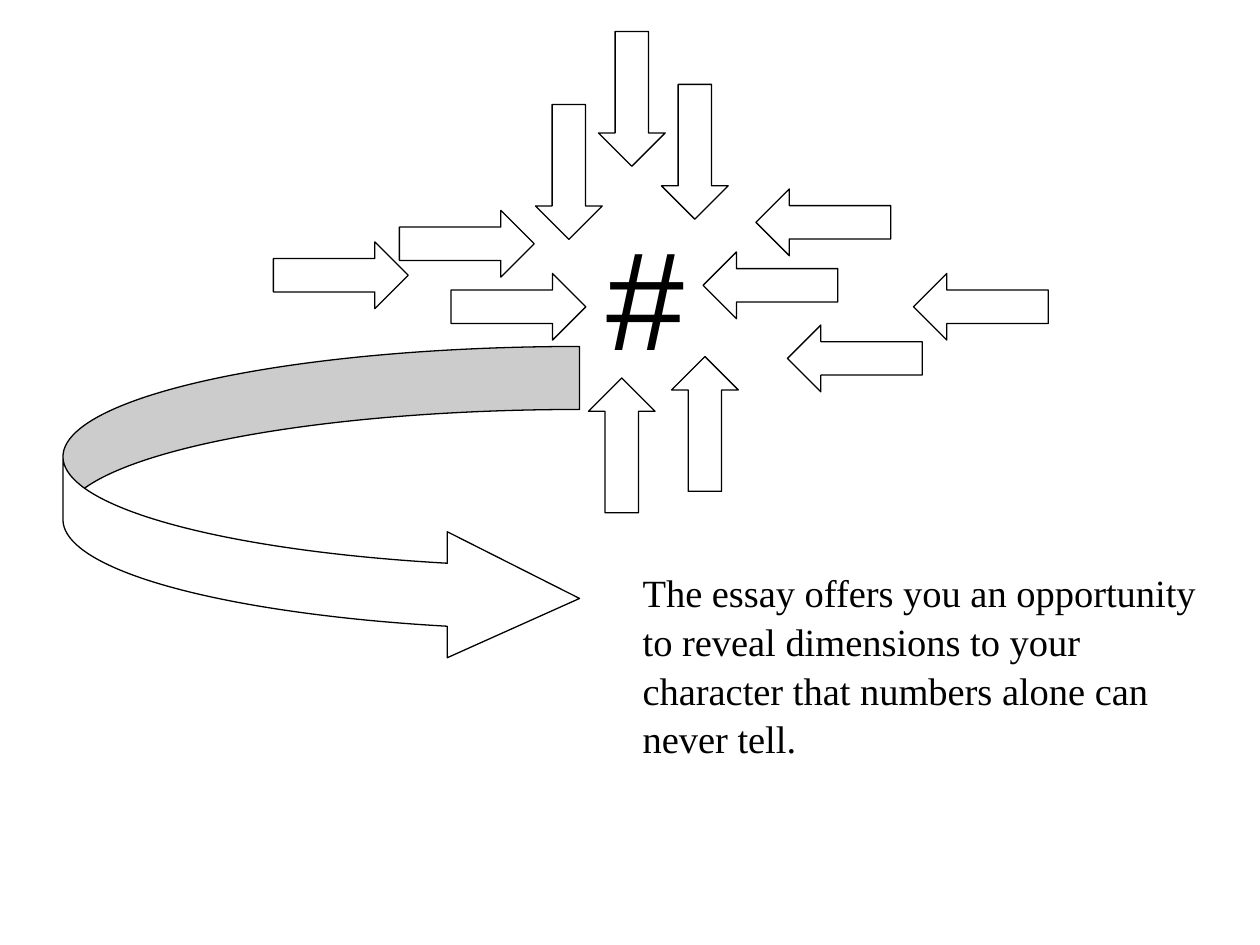
from dataclasses import dataclass

from lxml.etree import SubElement
from pptx import Presentation
from pptx.dml.color import RGBColor
from pptx.enum.shapes import MSO_SHAPE
from pptx.enum.text import MSO_ANCHOR, MSO_AUTO_SIZE, PP_ALIGN
from pptx.oxml.ns import qn
from pptx.util import Inches, Pt

BLACK = "000000"
WHITE = "FFFFFF"
ARROW_LENGTH = 1.07
ARROW_WIDTH = 0.53
ESSAY_TEXT = ("The essay offers you an opportunity to reveal dimensions to your "
              "character that numbers alone can never tell.")


@dataclass(frozen=True)
class Arrow:
    kind: MSO_SHAPE
    left: float
    top: float
    width: float
    height: float
    adjustments: tuple[float, ...] = (0.5, 0.5)


def horizontal(kind: MSO_SHAPE, left: float, top: float) -> Arrow:
    return Arrow(kind, left, top, ARROW_LENGTH, ARROW_WIDTH)


def vertical(kind: MSO_SHAPE, left: float, top: float) -> Arrow:
    return Arrow(kind, left, top, ARROW_WIDTH, ARROW_LENGTH)


ARROWS = [
    *(horizontal(MSO_SHAPE.RIGHT_ARROW, left, top)
      for left, top in [(3.58, 2.17), (3.17, 1.67)]),
    *(vertical(MSO_SHAPE.DOWN_ARROW, left, top)
      for left, top in [(4.25, 0.83), (4.75, 0.25), (5.25, 0.67)]),
    *(horizontal(MSO_SHAPE.LEFT_ARROW, left, top)
      for left, top in [(5.58, 2), (6, 1.5), (6.25, 2.58)]),
    Arrow(MSO_SHAPE.CURVED_RIGHT_ARROW, 0.5, 2.75, 4.1, 2.5, (0.2, 0.4, 0.42)),
    *(vertical(MSO_SHAPE.UP_ARROW, left, top)
      for left, top in [(4.67, 3), (5.33, 2.83)]),
    horizontal(MSO_SHAPE.LEFT_ARROW, 7.25, 2.17),
    horizontal(MSO_SHAPE.RIGHT_ARROW, 2.17, 1.92),
]


def color(value: str) -> RGBColor:
    return RGBColor.from_string(value)


def set_attributes(target, values: dict) -> None:
    for name, value in values.items():
        setattr(target, name, value)


def place(shape, left: float, top: float, width: float, height: float) -> None:
    set_attributes(shape, {"left": Inches(left), "top": Inches(top),
                           "width": Inches(width), "height": Inches(height)})


def add_text(paragraph, text: str, font_name: str, size: float) -> None:
    run = paragraph.add_run()
    run.text = text
    set_attributes(run.font, {"name": font_name, "size": Pt(size)})
    run.font.color.rgb = color(BLACK)


def draw_arrow(slide, arrow: Arrow) -> None:
    shape = slide.shapes.add_shape(
        arrow.kind, Inches(arrow.left), Inches(arrow.top),
        Inches(arrow.width), Inches(arrow.height))
    for index, value in enumerate(arrow.adjustments):
        shape.adjustments[index] = value
    shape.shadow.inherit = False
    shape.fill.solid()
    shape.fill.fore_color.rgb = color(WHITE)
    shape.line.color.rgb = color(BLACK)
    shape.line.width = Pt(0.75)


def fill_title(title) -> None:
    place(title, 4.25, 1.61, 1.75, 1.45)
    set_attributes(title.text_frame, {"auto_size": MSO_AUTO_SIZE.NONE,
                                      "vertical_anchor": MSO_ANCHOR.MIDDLE})
    paragraph = title.text_frame.paragraphs[0]
    paragraph.alignment = PP_ALIGN.CENTER
    add_text(paragraph, "#", "Arial", 80)


def fill_body(body) -> None:
    place(body, 4.5, 4.42, 5.33, 1.95)
    set_attributes(body.text_frame, {"auto_size": MSO_AUTO_SIZE.NONE,
                                     "vertical_anchor": MSO_ANCHOR.TOP,
                                     "word_wrap": True})
    paragraph = body.text_frame.paragraphs[0]
    set_attributes(paragraph, {"alignment": PP_ALIGN.LEFT, "line_spacing": 1.05,
                               "space_before": Pt(0)})
    properties = paragraph._p.get_or_add_pPr()
    properties.set("marL", str(Inches(0.5)))
    properties.set("indent", str(Inches(-0.5)))
    SubElement(properties, qn("a:buNone"))
    add_text(paragraph, "\t", "Times New Roman", 24)
    add_text(paragraph, ESSAY_TEXT, "Times New Roman", 22)


def main() -> None:
    presentation = Presentation()
    set_attributes(presentation, {"slide_width": Inches(10),
                                  "slide_height": Inches(7.5)})
    slide = presentation.slides.add_slide(presentation.slide_layouts[1])
    fill_title(slide.shapes.title)
    fill_body(slide.placeholders[1])
    for arrow in ARROWS:
        draw_arrow(slide, arrow)
    presentation.save("out.pptx")


if __name__ == "__main__":
    main()
